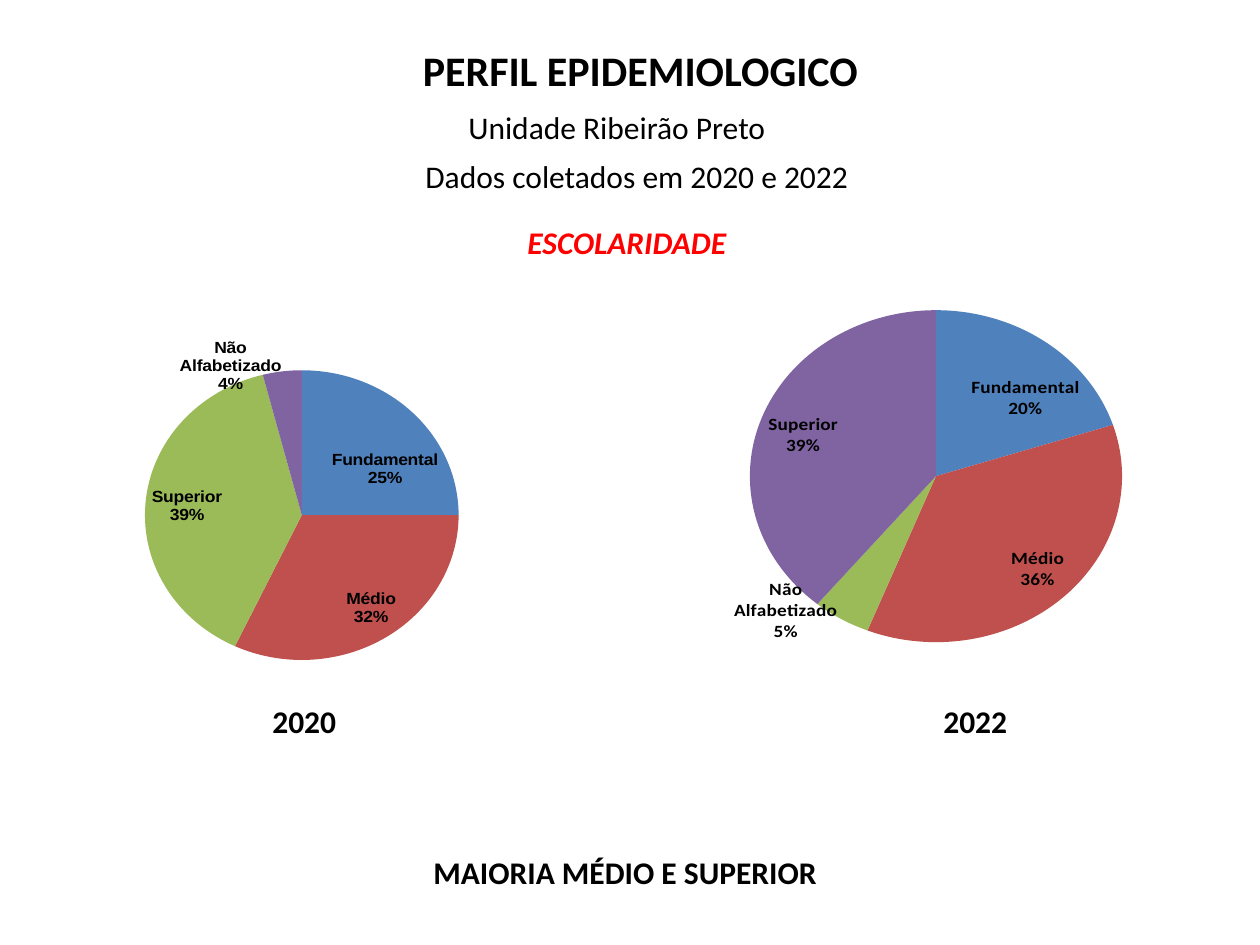
from lxml import etree
from pptx import Presentation
from pptx.chart.data import CategoryChartData
from pptx.dml.color import RGBColor
from pptx.enum.chart import XL_CHART_TYPE, XL_LABEL_POSITION
from pptx.enum.text import MSO_AUTO_SIZE, PP_ALIGN
from pptx.oxml import parse_xml
from pptx.oxml.ns import nsdecls, qn
from pptx.util import Pt

PIE = XL_CHART_TYPE.PIE
BEST_FIT = XL_LABEL_POSITION.BEST_FIT
GROW = MSO_AUTO_SIZE.SHAPE_TO_FIT_TEXT
LEFT, CENTER = PP_ALIGN.LEFT, PP_ALIGN.CENTER

EMU_PER_PX = 914400 / 126
COLORS = {"text": "000000", "accent": "FF0000", "blue": "4F81BD",
          "red": "C0504D", "green": "9BBB59", "purple": "8064A2"}
SLICE_COLORS = ("blue", "red", "green", "purple")


def px(length):
    return round(length * EMU_PER_PX)


def rgb(name):
    return RGBColor.from_string(COLORS[name])


def style_font(font, color="text", **values):
    for name, value in values.items():
        setattr(font, name, value)
    font.color.rgb = rgb(color)


def add_text(page, text, bounds, size=18, color="text", align=LEFT, wrap=False, **values):
    box = page.shapes.add_textbox(*map(px, bounds))
    frame = box.text_frame
    frame.word_wrap = wrap
    frame.auto_size = GROW
    para = frame.paragraphs[0]
    para.alignment = align
    span = para.add_run()
    span.text = text
    style_font(span.font, color, name="Calibri", size=Pt(size), **values)


def set_plot_layout(chart, plot_bounds):
    """Fix the inner plot area to fractions of the chart's size."""
    x, y, w, h = plot_bounds
    layout = parse_xml(
        f'<c:layout {nsdecls("c")}><c:manualLayout><c:layoutTarget val="inner"/>'
        f'<c:xMode val="edge"/><c:yMode val="edge"/><c:x val="{x}"/><c:y val="{y}"/>'
        f'<c:w val="{w}"/><c:h val="{h}"/></c:manualLayout></c:layout>')
    plot_area = chart.element.find(".//" + qn("c:plotArea"))
    for old_layout in plot_area.findall(qn("c:layout")):
        plot_area.remove(old_layout)
    plot_area.insert(0, layout)


def add_pie(page, bounds, plot_bounds, shares, label_font, label_size):
    data = CategoryChartData()
    data.categories = list(shares)
    data.add_series("Escolaridade", list(shares.values()))
    chart = page.shapes.add_chart(PIE, *map(px, bounds), data).chart
    chart.has_title = False
    chart.has_legend = False
    style_font(chart.font, name="Calibri", size=Pt(10))
    set_plot_layout(chart, plot_bounds)

    plot = chart.plots[0]
    plot.vary_by_categories = True
    for index, color in enumerate(SLICE_COLORS):
        fill = plot.series[0].points[index].format.fill
        fill.solid()
        fill.fore_color.rgb = rgb(color)

    # Category and percentage on separate lines
    labels = plot.series[0].data_labels
    settings = {"show_value": False, "show_category_name": True,
                "show_percentage": True, "position": BEST_FIT}
    for name, value in settings.items():
        setattr(labels, name, value)
    style_font(labels.font, name=label_font, size=Pt(label_size), bold=True)
    label_xml = chart.element.find(".//" + qn("c:ser") + "/" + qn("c:dLbls"))
    separator = etree.Element(qn("c:separator"))
    separator.text = "\n"
    last_flag = label_xml.find(qn("c:showBubbleSize"))
    if last_flag is None:
        last_flag = label_xml.find(qn("c:showPercent"))
    last_flag.addnext(separator)


def main():
    deck = Presentation()
    deck.slide_width, deck.slide_height = px(1260), px(945)
    page = deck.slides.add_slide(deck.slide_layouts[6])

    # Headings
    add_text(page, "PERFIL EPIDEMIOLOGICO", (260, 38, 761, 64), size=24,
             align=CENTER, wrap=True, bold=True)
    add_text(page, "Unidade Ribeirão Preto", (456, 102, 326, 51))
    add_text(page, "Dados coletados em 2020 e 2022", (413, 151, 454, 51))
    add_text(page, "ESCOLARIDADE", (515, 217, 229, 51), color="accent",
             bold=True, italic=True)

    # Schooling by year
    add_pie(page, (-10, 310, 630, 378), (0.06, 0.09, 0.87, 0.83),
            {"Fundamental": 25, "Médio": 32, "Superior": 39, "Não Alfabetizado": 4},
            "Arial", 10)
    add_pie(page, (626, 265, 614, 423), (0.05, 0.12, 0.91, 0.88),
            {"Fundamental": 20, "Médio": 36, "Não Alfabetizado": 5, "Superior": 39},
            "Calibri", 11)
    for year, left in (("2020", 260), ("2022", 931)):
        add_text(page, year, (left, 696, 89, 51), bold=True)

    # Conclusion
    add_text(page, "MAIORIA MÉDIO E SUPERIOR", (421, 847, 412, 51), bold=True)

    deck.save("out.pptx")


if __name__ == "__main__":
    main()
